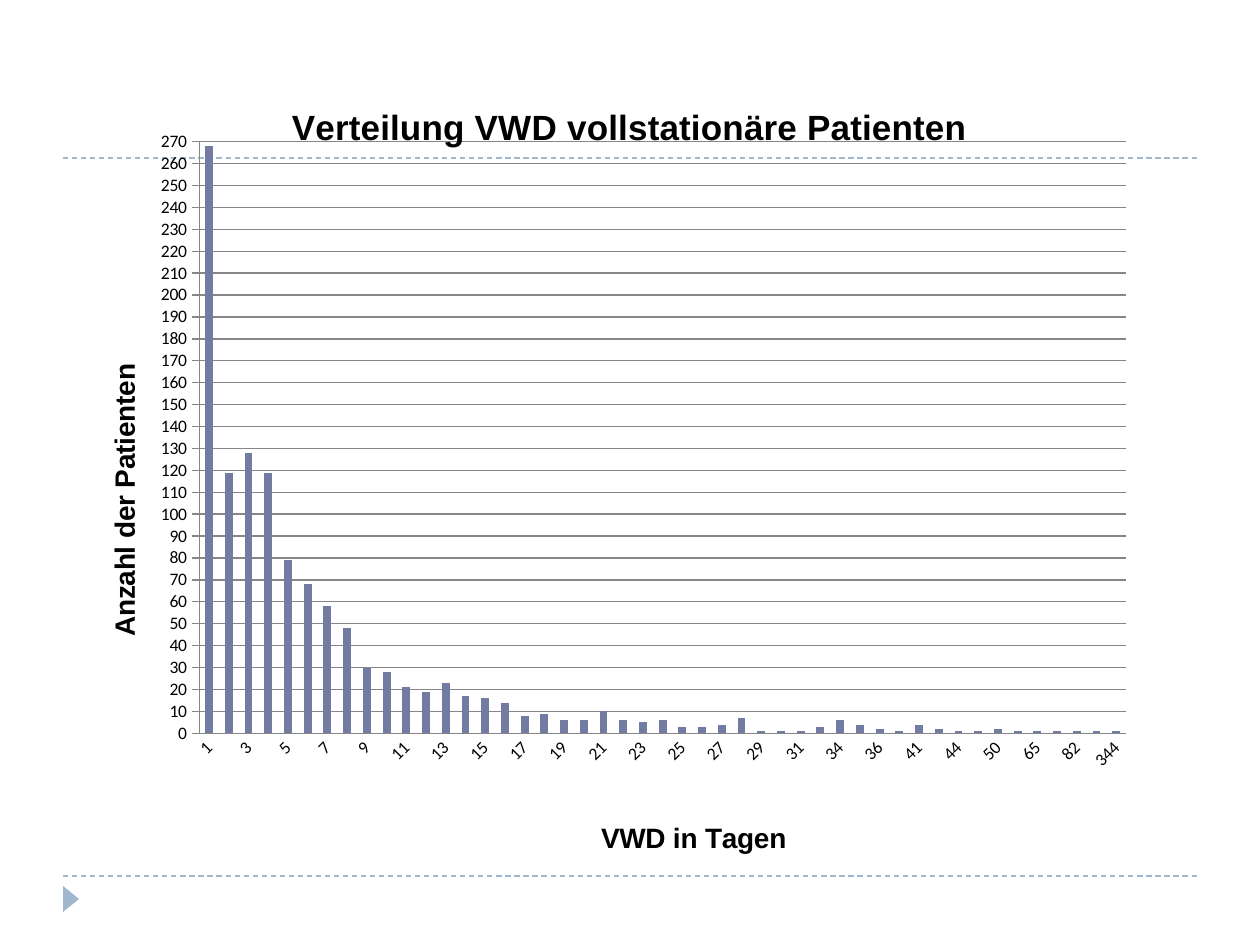
import pptx
import pptx.chart.data
import pptx.dml.color
import pptx.enum.chart
import pptx.enum.dml
import pptx.enum.shapes
import pptx.oxml
import pptx.oxml.ns
import pptx.util

RGBColor = pptx.dml.color.RGBColor
BLACK = RGBColor(0x00, 0x00, 0x00)
GREY = RGBColor(0x86, 0x86, 0x86)
MIST = RGBColor(0x9F, 0xB8, 0xCD)
SLATE = RGBColor(0x72, 0x7C, 0xA3)
qn = pptx.oxml.ns.qn
TICK = pptx.enum.chart.XL_TICK_MARK

STAY_DAYS = [*range(1, 32), 33, 34, 35, 36, 40, 41, 42, 44, 45, 50, 53, 65, 72, 82, 98, 344]
PATIENTS = [268, 119, 128, 119, 79, 68, 58, 48, 30, 28, 21, 19, 23, 17, 16, 14,
            8, 9, 6, 6, 10, 6, 5, 6, 3, 3, 4, 7, 1, 1, 1, 3, 6, 4, 2, 1, 4, 2,
            1, 1, 2, 1, 1, 1, 1, 1, 1]


def emu(px):
    return round(px * 914400 / 126)


def apply(target, values):
    for attribute, value in values.items():
        setattr(target, attribute, value)


def manual_layout(**values):
    layout = pptx.oxml.parse_xml(
        f'<c:layout {pptx.oxml.ns.nsdecls("c")}><c:manualLayout/></c:layout>')
    for tag, value in values.items():
        layout[0].append(layout.makeelement(qn(f"c:{tag}"), {"val": str(value)}))
    return layout


def drop_layout(element):
    for layout in element.findall(qn("c:layout")):
        element.remove(layout)


class SlideBuilder:
    label_font = {"name": "Calibri", "size": pptx.util.Pt(10)}
    title_font = {"name": "Arial", "bold": True}

    def __init__(self, slide):
        self.slide = slide

    def rule(self, y):
        rule = self.slide.shapes.add_connector(
            pptx.enum.shapes.MSO_CONNECTOR.STRAIGHT, emu(63), emu(y), emu(1197), emu(y))
        rule.line.color.rgb = MIST
        apply(rule.line, {"width": pptx.util.Pt(0.75),
                          "dash_style": pptx.enum.dml.MSO_LINE.DASH})
        properties = rule.element.spPr
        properties.append(properties.makeelement(qn("a:effectLst"), {}))

    def marker(self, x, y, width, height):
        marker = self.slide.shapes.add_shape(
            pptx.enum.shapes.MSO_SHAPE.ISOSCELES_TRIANGLE,
            emu(x), emu(y), emu(width), emu(height))
        marker.rotation = 90
        marker.shadow.inherit = False
        marker.fill.solid()
        marker.fill.fore_color.rgb = MIST
        marker.line.fill.background()

    def heading(self, owner, text, size, x, y, rotation=0):
        title = owner.chart_title if hasattr(owner, "chart_title") else owner.axis_title
        frame = title.text_frame
        frame.text = text
        font = frame.paragraphs[0].runs[0].font
        apply(font, {**self.title_font, "size": pptx.util.Pt(size)})
        font.color.rgb = BLACK
        body = title._element.find(f".//{qn('a:bodyPr')}")
        apply_xml = {"rot": str(rotation * 60000), "vert": "horz"}
        for name, value in apply_xml.items():
            body.set(name, value)
        drop_layout(title._element)
        title._element.find(qn("c:tx")).addnext(
            manual_layout(xMode="edge", yMode="edge", x=x, y=y))

    def axis(self, axis, values):
        apply(axis, values)
        apply(axis.tick_labels.font, self.label_font)
        axis.tick_labels.font.color.rgb = BLACK
        axis.format.line.color.rgb = GREY
        axis.format.line.width = pptx.util.Pt(0.75)

    def histogram(self, x, y, width, height):
        data = pptx.chart.data.CategoryChartData()
        data.categories = [str(day) for day in STAY_DAYS]
        data.add_series("Series 1", PATIENTS)
        chart = self.slide.shapes.add_chart(
            pptx.enum.chart.XL_CHART_TYPE.COLUMN_CLUSTERED,
            emu(x), emu(y), emu(width), emu(height), data).chart
        apply(chart, {"has_legend": False, "has_title": True})
        apply(chart.font, self.label_font)
        apply(chart.plots[0], {"gap_width": 150, "vary_by_categories": False})
        bars = chart.plots[0].series[0].format.fill
        bars.solid()
        bars.fore_color.rgb = SLATE

        days, count = chart.category_axis, chart.value_axis
        self.axis(days, {"major_tick_mark": TICK.NONE, "minor_tick_mark": TICK.NONE,
                         "has_major_gridlines": False})
        self.axis(count, {"major_tick_mark": TICK.OUTSIDE, "minor_tick_mark": TICK.NONE,
                          "minimum_scale": 0, "maximum_scale": 270, "major_unit": 10,
                          "has_major_gridlines": True})
        gridline = count.major_gridlines.format.line
        gridline.color.rgb = GREY
        gridline.width = pptx.util.Pt(0.75)

        day_axis = days._element
        day_axis.find(f"{qn('c:txPr')}/{qn('a:bodyPr')}").set("rot", "-2700000")
        day_axis.find(qn("c:noMultiLvlLbl")).addprevious(
            day_axis.makeelement(qn("c:tickLblSkip"), {"val": "2"}))

        self.heading(chart, "Verteilung VWD vollstationäre Patienten", 20, 0.21, 0.04)
        self.heading(days, "VWD in Tagen", 16, 0.48, 0.92)
        self.heading(count, "Anzahl der Patienten", 16, 0.05, 0.36, rotation=-90)

        plot_area = chart._chartSpace.chart.plotArea
        drop_layout(plot_area)
        plot_area.insert(0, manual_layout(
            layoutTarget="inner", xMode="edge", yMode="edge",
            x=0.135, y=0.093, w=0.806, h=0.727))


def main():
    presentation = pptx.Presentation()
    apply(presentation, {"slide_width": emu(1260), "slide_height": emu(945)})
    builder = SlideBuilder(presentation.slides.add_slide(presentation.slide_layouts[6]))
    for y in (876, 158):
        builder.rule(y)
    builder.marker(58, 891, 26, 16)
    builder.histogram(44, 66, 1150, 814)
    presentation.save("out.pptx")


if __name__ == "__main__":
    main()
